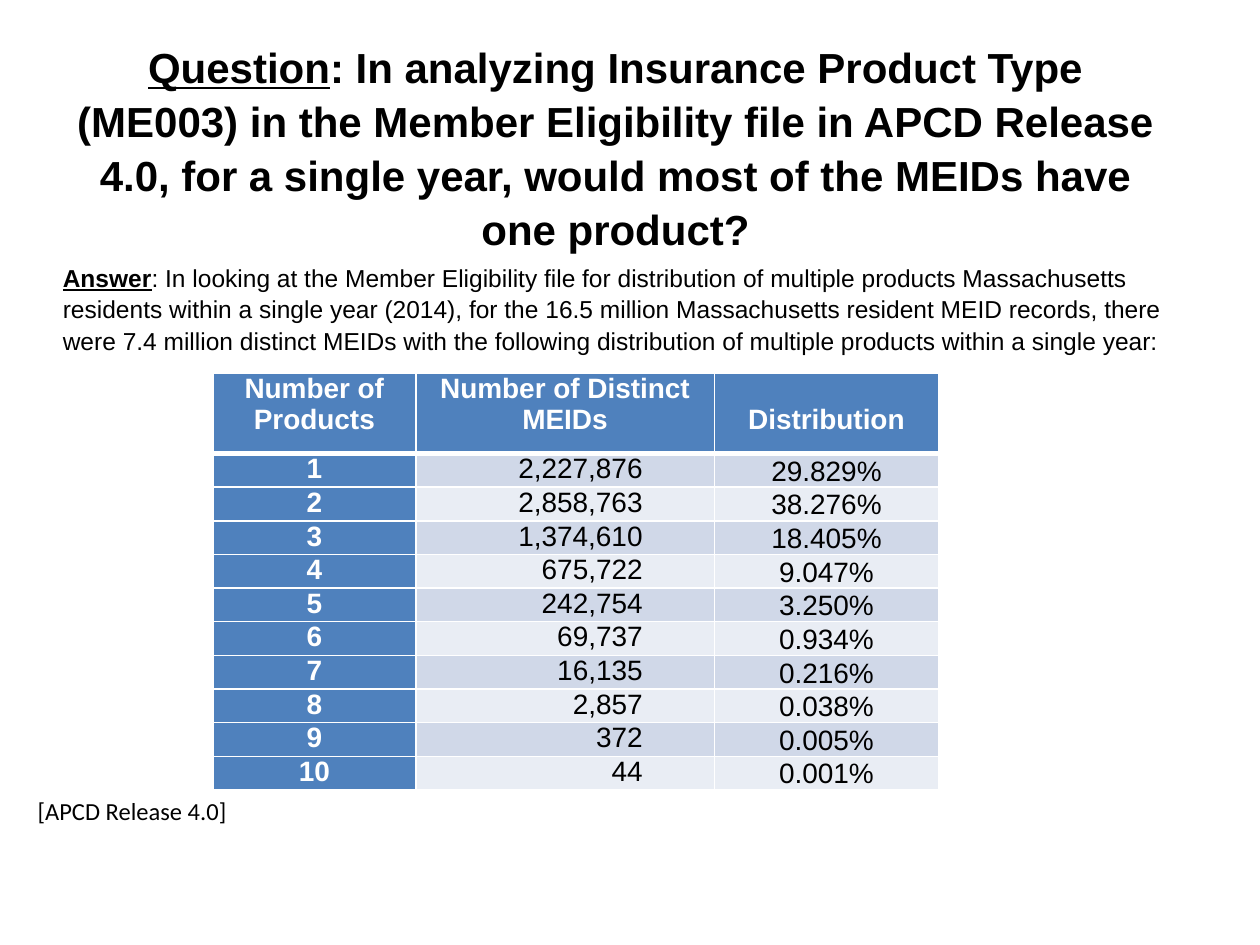
from pptx import Presentation
from pptx.dml.color import RGBColor
from pptx.enum.text import MSO_ANCHOR as Anchor, PP_ALIGN as Align
from pptx.oxml import parse_xml
from pptx.oxml.ns import nsdecls
from pptx.util import Inches, Pt

BLACK, WHITE, BLUE = "000000", "FFFFFF", "4F81BD"
BANDS = ("D0D8E8", "E9EDF4")
HEADERS = ("Number of Products", "Number of Distinct MEIDs", "Distribution")
ROWS = (
    ("1", "2,227,876", "29.829%"),
    ("2", "2,858,763", "38.276%"),
    ("3", "1,374,610", "18.405%"),
    ("4", "675,722", "9.047%"),
    ("5", "242,754", "3.250%"),
    ("6", "69,737", "0.934%"),
    ("7", "16,135", "0.216%"),
    ("8", "2,857", "0.038%"),
    ("9", "372", "0.005%"),
    ("10", "44", "0.001%"),
)


def rgb(value):
    """Turn a hex string into a colour."""
    return RGBColor.from_string(value)


def add_run(p, text, size=14, font="Arial", color=BLACK, bold=False, underline=False):
    """Add one formatted run to a paragraph."""
    r = p.add_run()
    r.text = text
    r.font.size, r.font.name = Pt(size), font
    r.font.bold, r.font.underline = bold, underline
    r.font.color.rgb = rgb(color)
    return r


def add_box(s, x, y, w, h, anchor=Anchor.TOP):
    """Add a wrapping text box and return its text frame."""
    tf = s.shapes.add_textbox(Inches(x), Inches(y), Inches(w), Inches(h)).text_frame
    tf.word_wrap = True
    tf.vertical_anchor = anchor
    return tf


def add_question(s, x, y, w, h):
    """Place the centred question at the head of the slide."""
    p = add_box(s, x, y, w, h, Anchor.MIDDLE).paragraphs[0]
    p.alignment, p.line_spacing = Align.CENTER, 1.07
    add_run(p, "Question", size=24, bold=True, underline=True)
    add_run(p, ": In analyzing Insurance Product Type (ME003) in the Member Eligibility "
               "file in APCD Release 4.0, for a single year, would most of the MEIDs "
               "have one product?", size=24, bold=True)


def add_answer(s, x, y, w, h):
    """Place the answer paragraphs."""
    tf = add_box(s, x, y, w, h)
    p = tf.paragraphs[0]
    add_run(p, "Answer", bold=True, underline=True)
    add_run(p, ": In looking at the Member Eligibility file for distribution of "
               "multiple products Massachusetts")
    add_run(tf.add_paragraph(),
            "residents within a single year (2014), for the 16.5 million Massachusetts "
            "resident MEID records, there were 7.4 million distinct MEIDs with the "
            "following distribution of multiple products within a single year:")
    for p in tf.paragraphs:
        p.line_spacing = 1.07


def set_borders(cell, bottom=1):
    """Draw white borders round a cell, with a chosen bottom width in points."""
    tc_pr = cell._tc.get_or_add_tcPr()
    widths = (("lnL", 1), ("lnR", 1), ("lnT", 1), ("lnB", bottom))
    for i, (tag, width) in enumerate(widths):
        tc_pr.insert(i, parse_xml(
            f'<a:{tag} {nsdecls("a")} w="{Pt(width)}"><a:solidFill>'
            f'<a:srgbClr val="{WHITE}"/></a:solidFill></a:{tag}>'))


def fill_cell(cell, text, fill, color=BLACK, bold=False, align=Align.CENTER,
              top=0, right=0.07, bottom_border=1):
    """Write and format one table cell."""
    cell.margin_left, cell.margin_right = Inches(0.07), Inches(right)
    cell.margin_top, cell.margin_bottom = Inches(top), 0
    cell.fill.solid()
    cell.fill.fore_color.rgb = rgb(fill)
    set_borders(cell, bottom_border)
    p = cell.text_frame.paragraphs[0]
    p.alignment = align
    add_run(p, text, size=16, color=color, bold=bold)


def add_distribution_table(s, x, y, w, h):
    """Place the table of products per member."""
    table = s.shapes.add_table(len(ROWS) + 1, len(HEADERS), Inches(x), Inches(y),
                               Inches(w), Inches(h)).table
    for col, width in zip(table.columns, (1.61, 2.37, 1.78)):
        col.width = Inches(width)
    for i, row in enumerate(table.rows):
        row.height = Inches(0.22 if i else 0.64)
    for j, text in enumerate(HEADERS):
        fill_cell(table.cell(0, j), text, BLUE, color=WHITE, bold=True,
                  top=0.25 if j == 2 else 0, bottom_border=3)
    for i, (products, members, share) in enumerate(ROWS, 1):
        band = BANDS[(i - 1) % 2]
        fill_cell(table.cell(i, 0), products, BLUE, color=WHITE, bold=True)
        fill_cell(table.cell(i, 1), members, band, align=Align.RIGHT, right=0.57)
        fill_cell(table.cell(i, 2), share, band)
        table.cell(i, 2).vertical_anchor = Anchor.BOTTOM


def add_release_note(s, x, y, w, h):
    """Place the release note below the table."""
    add_run(add_box(s, x, y, w, h).paragraphs[0], "[APCD Release 4.0]", font="Calibri")


def main():
    """Build and save the slide."""
    prs = Presentation()
    prs.slide_width, prs.slide_height = Inches(10), Inches(7.5)
    s = prs.slides.add_slide(prs.slide_layouts[6])
    add_question(s, 0.49, 0.81, 8.79, 0.7)
    add_distribution_table(s, 1.69, 2.96, 5.76, 2.84)
    add_answer(s, 0.4, 2.02, 9.28, 1.04)
    add_release_note(s, 0.2, 6.27, 2.18, 0.34)
    prs.save("out.pptx")


if __name__ == "__main__":
    main()
